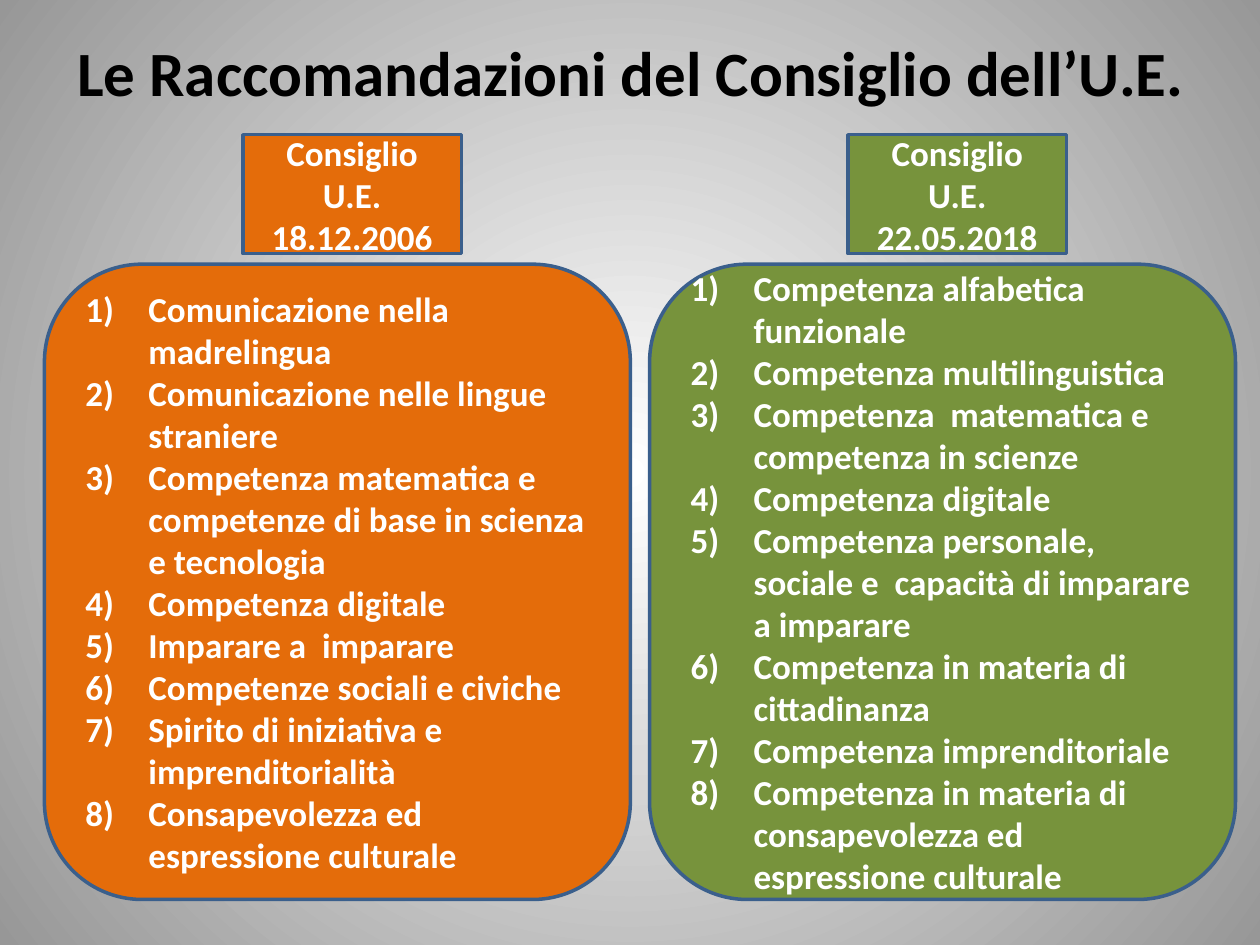
from dataclasses import dataclass

from lxml.etree import SubElement
from pptx import Presentation
from pptx.dml.color import RGBColor
from pptx.enum.shapes import MSO_SHAPE
from pptx.enum.text import MSO_ANCHOR, PP_ALIGN
from pptx.oxml.ns import qn
from pptx.util import Pt


@dataclass(frozen=True)
class Theme:
    font: str = "Calibri"
    title_size: int = 36
    body_size: int = 20
    title: str = "000000"
    text: str = "FFFFFF"
    outline: str = "3A5F8C"
    orange: str = "E46C0A"
    green: str = "77933C"
    bg_center: str = "FFFFFF"
    bg_edge: str = "979797"


def rgb(value):
    return RGBColor.from_string(value)


class Deck:
    """Draws styled elements on the current slide; lengths are in points."""

    def __init__(self, theme):
        self.theme = theme
        self.prs = Presentation()
        self.prs.slide_width, self.prs.slide_height = Pt(720), Pt(540)
        self.s = None

    def add_slide(self):
        self.s = self.prs.slides.add_slide(self.prs.slide_layouts[6])

    def radial_background(self):
        fill = self.s.background.fill
        fill.gradient()
        colors = (self.theme.bg_center, self.theme.bg_edge)
        for stop, position, color in zip(fill.gradient_stops, (0, 1), colors):
            stop.position = position
            stop.color.rgb = rgb(color)
        grad = self.s.element.xpath(".//p:bg//a:gradFill")[0]
        grad.remove(grad.find(qn("a:lin")))
        circle = SubElement(grad, qn("a:path"))
        circle.set("path", "circle")
        SubElement(circle, qn("a:fillToRect"), l="50000", t="50000", r="50000", b="50000")

    def set_text(self, sp, lines, size, color, align):
        tf = sp.text_frame
        tf.word_wrap = True
        tf.vertical_anchor = MSO_ANCHOR.MIDDLE
        tf.text = "\n".join(lines)
        for p in tf.paragraphs:
            p.alignment = align
            for r in p.runs:
                r.font.name = self.theme.font
                r.font.size = Pt(size)
                r.font.bold = True
                r.font.color.rgb = rgb(color)

    def title(self, text, x, y, w, h):
        sp = self.s.shapes.add_textbox(Pt(x), Pt(y), Pt(w), Pt(h))
        sp.text_frame.margin_left = sp.text_frame.margin_right = 0
        self.set_text(sp, [text], self.theme.title_size, self.theme.title, PP_ALIGN.CENTER)

    def box(self, shape, lines, color, x, y, w, h, align=PP_ALIGN.CENTER):
        sp = self.s.shapes.add_shape(shape, Pt(x), Pt(y), Pt(w), Pt(h))
        sp.shadow.inherit = False
        sp.fill.solid()
        sp.fill.fore_color.rgb = rgb(color)
        sp.line.color.rgb = rgb(self.theme.outline)
        sp.line.width = Pt(2)
        self.set_text(sp, lines, self.theme.body_size, self.theme.text, align)
        return sp

    def numbered_panel(self, items, color, x, y, w, h):
        sp = self.box(MSO_SHAPE.ROUNDED_RECTANGLE, items, color, x, y, w, h, PP_ALIGN.LEFT)
        indent = Pt(36)
        for p in sp.text_frame.paragraphs:
            pPr = p._p.get_or_add_pPr()
            pPr.set("marL", str(indent))
            pPr.set("indent", str(-indent))
            SubElement(pPr, qn("a:buFont"), typeface="+mj-lt")
            SubElement(pPr, qn("a:buAutoNum"), type="arabicParenR")


THEME = Theme()
COLUMNS = [
    ("18.12.2006", THEME.orange, [
        "Comunicazione nella madrelingua",
        "Comunicazione nelle lingue straniere",
        "Competenza matematica e  competenze di base in scienza e tecnologia",
        "Competenza digitale",
        "Imparare a  imparare",
        "Competenze sociali e civiche",
        "Spirito di iniziativa e imprenditorialità",
        "Consapevolezza ed espressione culturale",
    ]),
    ("22.05.2018", THEME.green, [
        "Competenza alfabetica funzionale",
        "Competenza multilinguistica",
        "Competenza  matematica e competenza in scienze",
        "Competenza digitale",
        "Competenza personale, sociale e  capacità di imparare a imparare",
        "Competenza in materia di cittadinanza",
        "Competenza imprenditoriale",
        "Competenza in materia di consapevolezza ed espressione culturale",
    ]),
]
LEFT, COLUMN_STEP, HEADER_OFFSET = 25.4, 345.8, 113.4


def main():
    deck = Deck(THEME)
    deck.add_slide()
    deck.radial_background()
    deck.title("Le Raccomandazioni del Consiglio dell’U.E.", 36.5, 15, 648, 51)
    for i, (date, color, items) in enumerate(COLUMNS):
        x = LEFT + i * COLUMN_STEP
        deck.box(MSO_SHAPE.RECTANGLE, ["Consiglio U.E.", date], color,
                 x + HEADER_OFFSET, 77, 124.8, 68)
        deck.numbered_panel(items, color, x, 151, 334.8, 363)
    deck.prs.save("out.pptx")


if __name__ == "__main__":
    main()
